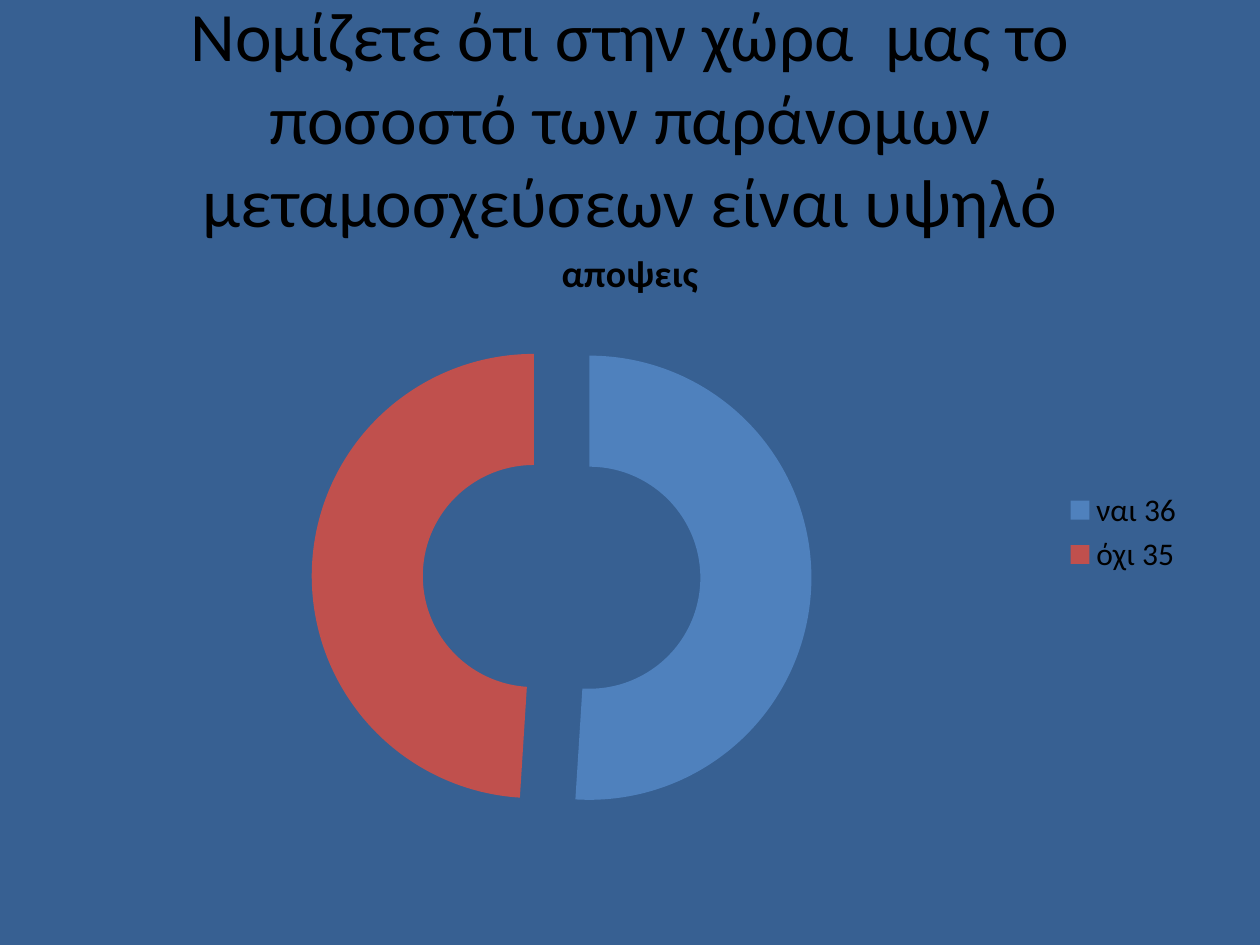
from lxml import etree
from pptx import Presentation
from pptx.chart.data import CategoryChartData
from pptx.dml.color import RGBColor
from pptx.enum.chart import XL_CHART_TYPE as CHART, XL_LEGEND_POSITION as LEGEND
from pptx.enum.text import MSO_ANCHOR as ANCHOR, MSO_AUTO_SIZE as AUTO, PP_ALIGN as ALIGN
from pptx.oxml.ns import qn
from pptx.util import Inches, Pt

FONT = "Calibri"
BACKGROUND, TEXT = "376092", "000000"
SLICES = [("ναι 36", 51, "4F81BD"), ("όχι 35", 49, "C0504D")]
TITLE = "Νομίζετε ότι στην χώρα  μας το ποσοστό των παράνομων μεταμοσχεύσεων είναι υψηλό"
CHART_TITLE = "αποψεις"
MARGIN, CONTENT_WIDTH = Inches(0.5), Inches(9)


def paint(fill, color):
    fill.solid()
    fill.fore_color.rgb = RGBColor.from_string(color)


def style_font(font, size, bold=False):
    for name, value in {"name": FONT, "size": Pt(size), "bold": bold}.items():
        setattr(font, name, value)
    font.color.rgb = RGBColor.from_string(TEXT)


def set_title(s):
    sp = s.shapes.title
    place = {"left": MARGIN, "top": Inches(0.3), "width": CONTENT_WIDTH, "height": Inches(1.25)}
    for name, value in place.items():
        setattr(sp, name, value)
    tf = sp.text_frame
    frame = {"word_wrap": True, "auto_size": AUTO.NONE, "vertical_anchor": ANCHOR.MIDDLE}
    for name, value in frame.items():
        setattr(tf, name, value)
    p = tf.paragraphs[0]
    p.alignment = ALIGN.CENTER
    r = p.add_run()
    r.text = TITLE
    style_font(r.font, 39.6)


def explode(series, percent):
    """Pull all slices of a series outwards; its points must be formatted first."""
    ser = series._element
    for old in ser.findall(qn("c:explosion")):
        ser.remove(old)
    explosion = etree.Element(qn("c:explosion"), val=str(percent))
    ser.find(qn("c:dPt")).addprevious(explosion)


def add_doughnut(s):
    data = CategoryChartData()
    data.categories = [name for name, _, _ in SLICES]
    data.add_series(CHART_TITLE, [value for _, value, _ in SLICES])
    chart = s.shapes.add_chart(CHART.DOUGHNUT, MARGIN, Inches(1.75),
                               CONTENT_WIDTH, Inches(4.95), data).chart
    style_font(chart.font, 18)

    chart.has_title = True
    tf = chart.chart_title.text_frame
    tf.text = CHART_TITLE
    style_font(tf.paragraphs[0].runs[0].font, 21.6, bold=True)
    chart.chart_title.include_in_layout = False

    chart.has_legend = True
    chart.legend.position = LEGEND.RIGHT
    chart.legend.include_in_layout = False

    plot = chart.plots[0]
    plot.vary_by_categories = True
    plot.has_data_labels = False
    series = plot.series[0]
    for i, (_, _, color) in enumerate(SLICES):
        paint(series.points[i].format.fill, color)
    explode(series, 25)


def main():
    prs = Presentation()
    prs.slide_width, prs.slide_height = Inches(10), Inches(7.5)
    s = prs.slides.add_slide(prs.slide_layouts.get_by_name("Title Only"))
    paint(s.background.fill, BACKGROUND)
    set_title(s)
    add_doughnut(s)
    prs.save("out.pptx")


if __name__ == "__main__":
    main()
